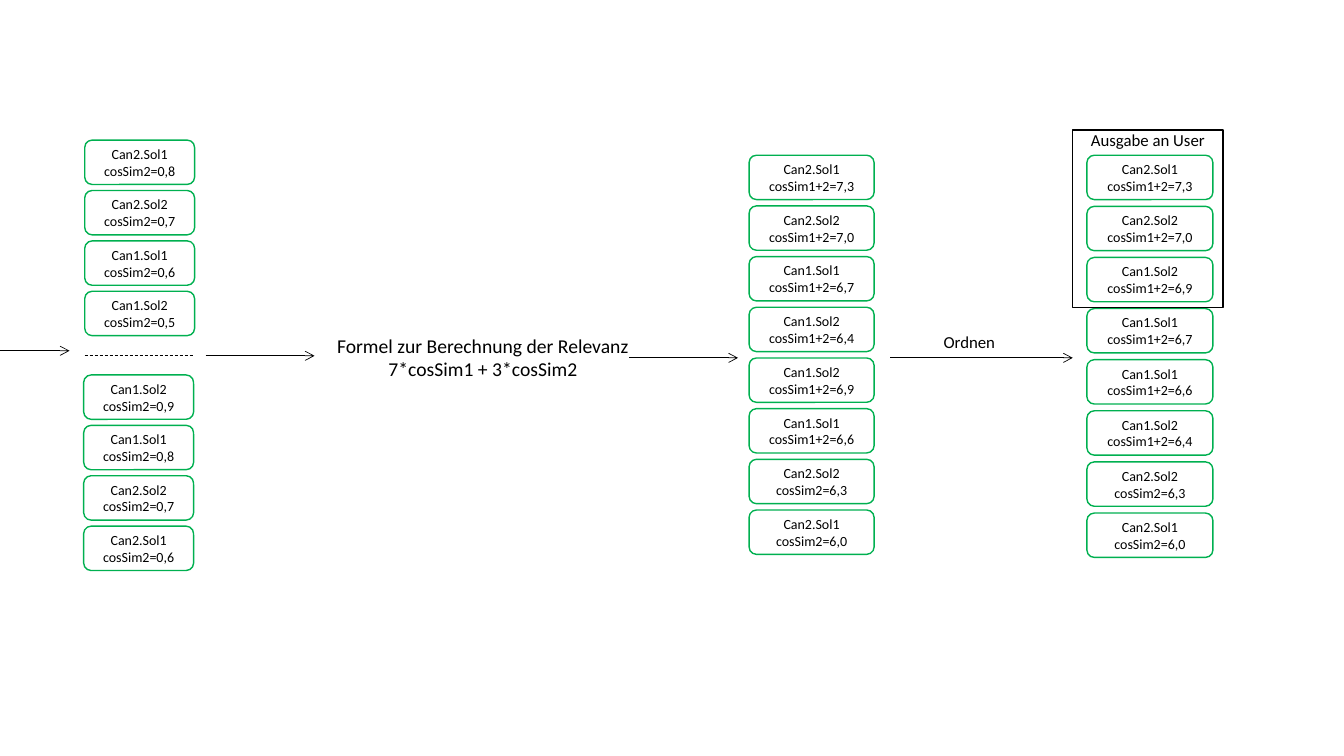
from lxml.etree import SubElement
from pptx import Presentation
from pptx.dml.color import RGBColor
from pptx.enum.dml import MSO_LINE
from pptx.enum.shapes import MSO_CONNECTOR, MSO_SHAPE
from pptx.enum.text import MSO_ANCHOR, MSO_AUTO_SIZE, PP_ALIGN
from pptx.oxml.ns import qn
from pptx.util import Inches, Pt

BLACK = RGBColor(0, 0, 0)
GREEN = RGBColor(0x00, 0xB0, 0x50)

deck = Presentation()
deck.slide_width = Inches(13.33)
deck.slide_height = Inches(7.5)
slide = deck.slides.add_slide(deck.slide_layouts[6])
shapes = slide.shapes


def write(shape, lines, size, align, frame):
    text = shape.text_frame
    for key, value in frame.items():
        setattr(text, key, value)
    look = {"name": "Calibri", "size": Pt(size)}
    for i, line in enumerate(lines):
        para = text.paragraphs[0] if i == 0 else text.add_paragraph()
        para.alignment = align
        run = para.add_run()
        run.text = line
        for key, value in look.items():
            setattr(run.font, key, value)
        run.font.color.rgb = BLACK


def outline(kind, box, color):
    shape = shapes.add_shape(kind, *map(Inches, box))
    shape.shadow.inherit = False
    shape.fill.background()
    shape.line.color.rgb = color
    shape.line.width = Pt(1)
    return shape


stacks = [
    (0.84, 1.39, 2.89, 1.09, [
        "Can2.Sol1 cosSim2=0,8", "Can2.Sol2 cosSim2=0,7",
        "Can1.Sol1 cosSim2=0,6", "Can1.Sol2 cosSim2=0,5"]),
    (0.83, 3.72, 5.22, 1.09, [
        "Can1.Sol2 cosSim2=0,9", "Can1.Sol1 cosSim2=0,8",
        "Can2.Sol2 cosSim2=0,7", "Can2.Sol1 cosSim2=0,6"]),
    (7.43, 1.54, 5.06, 1.24, [
        "Can2.Sol1 cosSim1+2=7,3", "Can2.Sol2 cosSim1+2=7,0",
        "Can1.Sol1 cosSim1+2=6,7", "Can1.Sol2 cosSim1+2=6,4",
        "Can1.Sol2 cosSim1+2=6,9", "Can1.Sol1 cosSim1+2=6,6",
        "Can2.Sol2 cosSim2=6,3", "Can2.Sol1 cosSim2=6,0"]),
    (10.78, 1.54, 5.09, 1.25, [
        "Can2.Sol1 cosSim1+2=7,3", "Can2.Sol2 cosSim1+2=7,0",
        "Can1.Sol2 cosSim1+2=6,9", "Can1.Sol1 cosSim1+2=6,7",
        "Can1.Sol1 cosSim1+2=6,6", "Can1.Sol2 cosSim1+2=6,4",
        "Can2.Sol2 cosSim2=6,3", "Can2.Sol1 cosSim2=6,0"]),
]
middle = {"vertical_anchor": MSO_ANCHOR.MIDDLE, "word_wrap": True}
for left, first, last, width, cards in stacks:
    step = (last - first) / (len(cards) - 1)
    for i, card in enumerate(cards):
        box = (left, first + i * step, width, 0.44)
        shape = outline(MSO_SHAPE.ROUNDED_RECTANGLE, box, GREEN)
        write(shape, card.split(), 10, PP_ALIGN.CENTER, middle)

labels = [
    ((3.23, 3.26, 3.12, 0.57), 14, PP_ALIGN.CENTER,
     ["Formel zur Berechnung der Relevanz", "7*cosSim1 + 3*cosSim2"]),
    ((9.26, 3.24, 0.72, 0.3), 12, PP_ALIGN.LEFT, ["Ordnen"]),
]
grow = {"word_wrap": False, "auto_size": MSO_AUTO_SIZE.SHAPE_TO_FIT_TEXT}
for box, size, align, lines in labels:
    label = shapes.add_textbox(*map(Inches, box))
    write(label, lines, size, align, grow)

links = [
    (0.84, 1.93, 3.53, False),
    (0, 0.69, 3.48, True),
    (2.04, 3.12, 3.53, True),
    (6.24, 7.32, 3.55, True),
    (8.83, 10.64, 3.55, True),
]
for start, end, y, arrow in links:
    link = shapes.add_connector(
        MSO_CONNECTOR.STRAIGHT, *map(Inches, (start, y, end, y)))
    link.line.color.rgb = BLACK
    link.line.width = Pt(0.5)
    if arrow:
        SubElement(link.line._get_or_add_ln(), qn("a:tailEnd"), type="arrow")
    else:
        link.line.dash_style = MSO_LINE.DASH
    SubElement(link._element.spPr, qn("a:effectLst"))

frame = outline(MSO_SHAPE.RECTANGLE, (10.64, 1.29, 1.49, 1.76), BLACK)
top = {"vertical_anchor": MSO_ANCHOR.TOP, "word_wrap": True, "margin_top": 0}
write(frame, ["Ausgabe an User"], 12, PP_ALIGN.CENTER, top)

deck.save("out.pptx")
